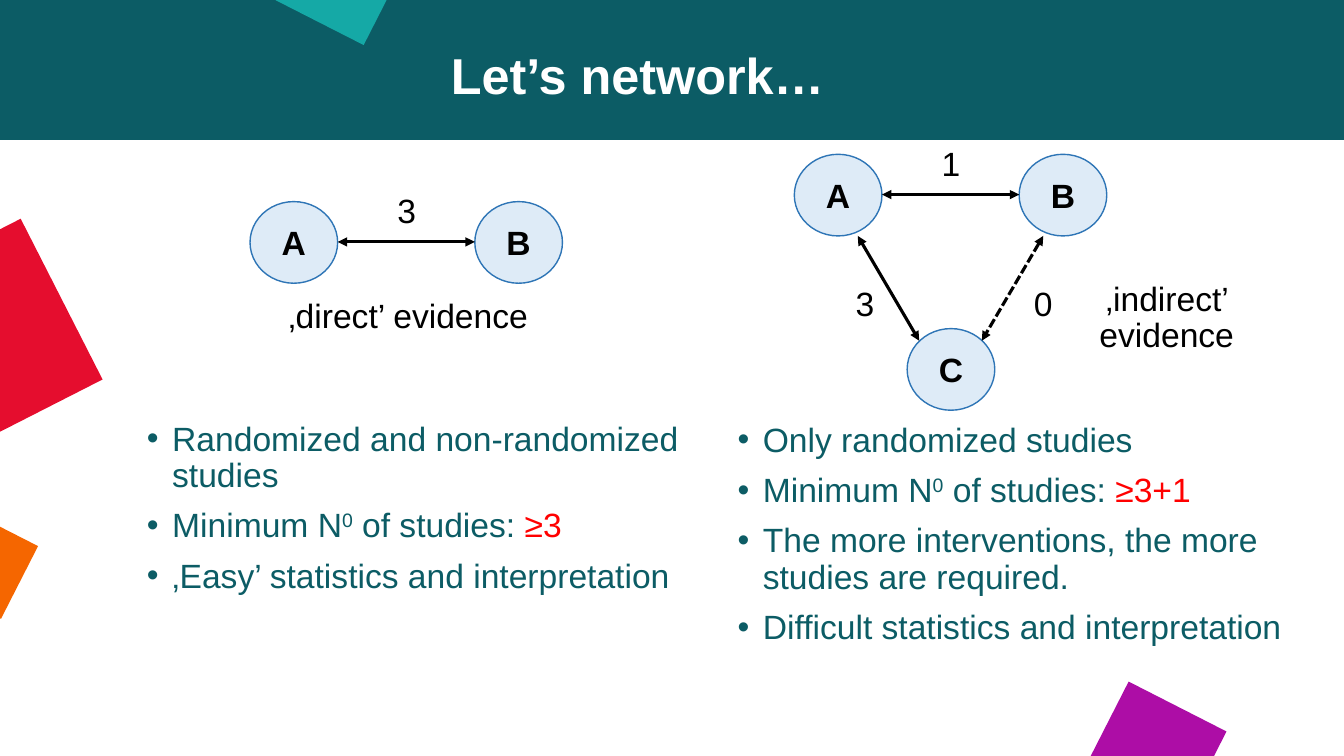
import pptx
import pptx.chart.data
import pptx.dml.color
import pptx.enum.dml
import pptx.enum.shapes
import pptx.enum.text
import pptx.oxml
import pptx.oxml.ns
import pptx.util
import lxml.etree

Pt = pptx.util.Pt
SHAPES = pptx.enum.shapes.MSO_SHAPE
ALIGN = pptx.enum.text.PP_ALIGN
ANCHOR = pptx.enum.text.MSO_ANCHOR
DASH = pptx.enum.dml.MSO_LINE

TEAL = "0C5C65"
BLACK = "000000"
RED = "FF0000"
NODE_WIDTH, NODE_HEIGHT = 62.6, 58.3
NODE_STEP = 160.6

LABEL_FORMAT = {"alignment": ALIGN.CENTER, "line_spacing": 0.9, "space_before": Pt(0)}
NODE_FORMAT = {"alignment": ALIGN.CENTER}
PLAIN_FONT = {"name": "Arial", "size": Pt(24), "bold": False}
BOLD_FONT = {"name": "Arial", "size": Pt(24), "bold": True}
TITLE_FONT = {"name": "Arial", "size": Pt(36), "bold": True}


def color(value):
    return pptx.dml.color.RGBColor.from_string(value)


def apply(target, formats):
    for name, value in formats.items():
        setattr(target, name, value)


def add_span(para, text, font, ink, baseline=0):
    span = para.add_run()
    span.text = text
    apply(span.font, font)
    span.font.color.rgb = color(ink)
    if baseline:
        span._r.get_or_add_rPr().set("baseline", str(baseline * 1000))


def add_block(page, kind, place, fill, rotation=0):
    block = page.shapes.add_shape(kind, *map(Pt, place))
    block.shadow.inherit = False
    block.rotation = rotation
    block.fill.solid()
    block.fill.fore_color.rgb = color(fill)
    block.line.fill.background()
    return block


def add_node(page, letter, left, top):
    node = add_block(page, SHAPES.OVAL, (left, top, NODE_WIDTH, NODE_HEIGHT), "DEEBF7")
    node.line.color.rgb = color("2E75B6")
    node.line.width = Pt(1)
    node.text_frame.vertical_anchor = ANCHOR.MIDDLE
    para = node.text_frame.paragraphs[0]
    apply(para, NODE_FORMAT)
    add_span(para, letter, BOLD_FONT, BLACK)


def add_arrow(page, start, end, dash=None):
    arrow = page.shapes.add_connector(
        pptx.enum.shapes.MSO_CONNECTOR.STRAIGHT, *map(Pt, (*start, *end))
    )
    arrow.line.color.rgb = color(BLACK)
    arrow.line.width = Pt(2.25)
    if dash:
        arrow.line.dash_style = dash
    outline = arrow.line._get_or_add_ln()
    for tag in ("a:headEnd", "a:tailEnd"):
        lxml.etree.SubElement(outline, pptx.oxml.ns.qn(tag), type="triangle")
    lxml.etree.SubElement(arrow._element.spPr, pptx.oxml.ns.qn("a:effectLst"))


def add_box(page, place):
    box = page.shapes.add_textbox(*map(Pt, place))
    box.text_frame.word_wrap = True
    return box.text_frame


def add_label(page, text, place, font=PLAIN_FONT, ink=BLACK):
    para = add_box(page, place).paragraphs[0]
    apply(para, LABEL_FORMAT)
    add_span(para, text, font, ink)


def add_count(page, text, left, top):
    add_label(page, text, (left, top, 49, 37.4))


def add_pair(page, left, top, count):
    add_node(page, "A", left, top)
    add_node(page, "B", left + NODE_STEP, top)
    middle = top + 28.8
    add_arrow(page, (left + NODE_WIDTH, middle), (left + NODE_STEP, middle))
    add_count(page, count, left + 87.4, top - 8.6)


def add_bullets(page, place, items):
    frame = add_box(page, place)
    for index, spans in enumerate(items):
        para = frame.add_paragraph() if index else frame.paragraphs[0]
        apply(para, {"line_spacing": 0.9, "space_before": Pt(10 if index else 0)})
        properties = para._p.get_or_add_pPr()
        properties.set("marL", str(Pt(18)))
        properties.set("indent", str(-Pt(18)))
        lxml.etree.SubElement(properties, pptx.oxml.ns.qn("a:buFont"), typeface="Arial")
        lxml.etree.SubElement(properties, pptx.oxml.ns.qn("a:buChar"), char="•")
        for text, ink, baseline in spans:
            add_span(para, text, PLAIN_FONT, ink, baseline)


def sentence(text):
    return [(text, TEAL, 0)]


def minimum(count):
    return [("Minimum N", TEAL, 0), ("0", TEAL, 30), (" of studies: ", TEAL, 0), (count, RED, 0)]


def main():
    deck = pptx.Presentation()
    deck.slide_width, deck.slide_height = Pt(960), Pt(540)
    page = deck.slides.add_slide(deck.slide_layouts[6])

    for place, fill, rotation in (
        ((0, 0, 960, 100), TEAL, 0),
        ((-78.5, 178.6, 129.6, 128.9), "E50D2E", 333),
        ((784.1, 500.4, 78.5, 78.5), "AD0DA6", 27),
        ((-43.9, 373, 61.2, 58.3), "F56600", 27),
        ((209.5, -52.6, 70.6, 72.7), "15A9A6", 27),
    ):
        add_block(page, SHAPES.RECTANGLE, place, fill, rotation)
    add_label(page, "Let’s network…", (193, 33.1, 524.9, 29.5), TITLE_FONT, "FFFFFF")

    add_pair(page, 178.6, 144, "3")
    add_label(page, "‚direct’ evidence", (181.4, 210.2, 220.3, 37.4))

    add_pair(page, 567.4, 110.2, "1")
    add_node(page, "C", 648, 234.7)
    add_arrow(page, (612.7, 168.5), (656.6, 243.4))
    add_arrow(page, (745.2, 168.5), (701.3, 243.4), DASH.SQUARE_DOT)
    add_count(page, "3", 593.3, 201.6)
    add_count(page, "0", 720.7, 201.6)
    add_label(page, "‚indirect’ evidence", (751.7, 198, 163.4, 37.4))

    add_bullets(page, (97.9, 298.1, 399.6, 146.9), [
        sentence("Randomized and non-randomized studies"),
        minimum("≥3"),
        sentence("‚Easy’ statistics and interpretation"),
    ])
    add_bullets(page, (519.8, 298.8, 432.7, 208.8), [
        sentence("Only randomized studies"),
        minimum("≥3+1"),
        sentence("The more interventions, the more studies are required."),
        sentence("Difficult statistics and interpretation"),
    ])
    deck.save("out.pptx")


if __name__ == "__main__":
    main()
